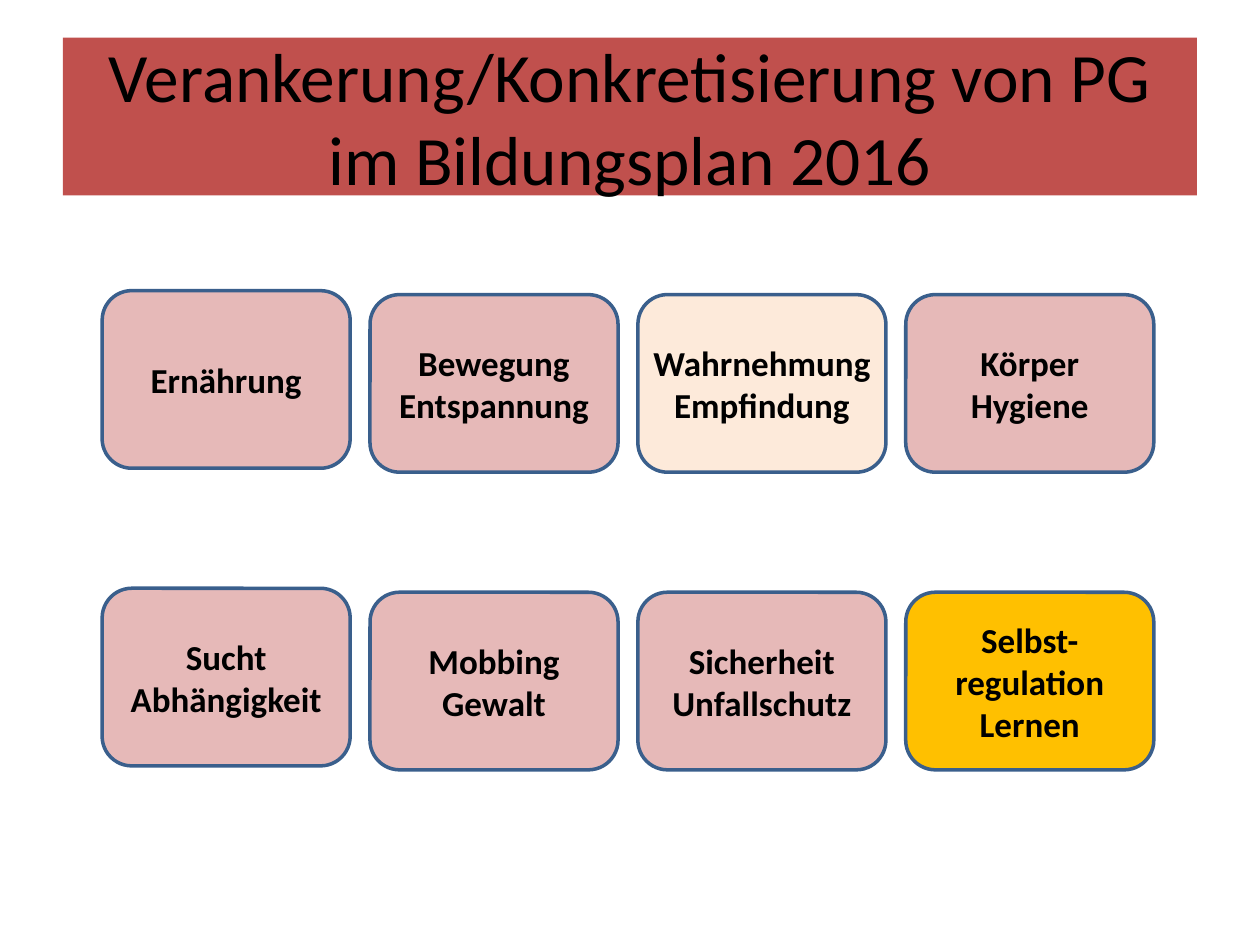
from pptx import Presentation
from pptx.dml.color import RGBColor
from pptx.enum.shapes import MSO_SHAPE
from pptx.enum.text import MSO_ANCHOR, PP_ALIGN
from pptx.util import Cm, Pt

RECTANGLE = MSO_SHAPE.RECTANGLE
ROUNDED = MSO_SHAPE.ROUNDED_RECTANGLE
MIDDLE = MSO_ANCHOR.MIDDLE
CENTER = PP_ALIGN.CENTER

COLORS = {
    "title": "C0504D",
    "rose": "E6B9B8",
    "cream": "FDEADA",
    "gold": "FFC000",
    "outline": "3A5F8C",
    "text": "000000",
}

TOPIC_ROWS = [
    [
        ("Ernährung", "rose"),
        ("Bewegung\nEntspannung", "rose"),
        ("Wahrnehmung\nEmpfindung", "cream"),
        ("Körper\nHygiene", "rose"),
    ],
    [
        ("Sucht\nAbhängigkeit", "rose"),
        ("Mobbing\nGewalt", "rose"),
        ("Sicherheit\nUnfallschutz", "rose"),
        ("Selbst-regulation\nLernen", "gold"),
    ],
]
LEFT, TOP = 2.06, 5.94
COLUMN_STEP, ROW_STEP = 5.4, 6
TOPIC_WIDTH, TOPIC_HEIGHT = 5, 3.58
FIRST_COLUMN_RAISE = 0.08


def color(name):
    return RGBColor.from_string(COLORS[name])


def write_text(shape, text, *, size, bold=False, margin=None):
    """Write centred text, one paragraph per line; margin is in centimetres."""
    frame = shape.text_frame
    frame.word_wrap = True
    frame.vertical_anchor = MIDDLE
    if margin is not None:
        frame.margin_left = frame.margin_right = Cm(margin)
        frame.margin_top = frame.margin_bottom = Cm(margin)
    frame.text = text
    for paragraph in frame.paragraphs:
        paragraph.alignment = CENTER
        font = paragraph.runs[0].font
        font.name = "Calibri"
        font.size = Pt(size)
        font.bold = bold
        font.color.rgb = color("text")


class SlideBuilder:
    """Holds the text sizes and the current slide."""

    title_size = 39.6
    topic_size = 20
    outline_width = 2

    def __init__(self, slide):
        self.slide = slide

    def box(self, kind, left, top, width, height, fill):
        shape = self.slide.shapes.add_shape(
            kind, Cm(left), Cm(top), Cm(width), Cm(height)
        )
        shape.shadow.inherit = False
        shape.fill.solid()
        shape.fill.fore_color.rgb = color(fill)
        return shape

    def title(self, text):
        shape = self.box(RECTANGLE, 1.27, 0.76, 22.86, 3.18, "title")
        shape.line.fill.background()
        write_text(shape, text, size=self.title_size)

    def topic(self, text, left, top, fill):
        shape = self.box(ROUNDED, left, top, TOPIC_WIDTH, TOPIC_HEIGHT, fill)
        shape.line.color.rgb = color("outline")
        shape.line.width = Pt(self.outline_width)
        write_text(shape, text, size=self.topic_size, bold=True, margin=0.1)


def main():
    presentation = Presentation()
    presentation.slide_width = Cm(25.4)
    presentation.slide_height = Cm(19.05)
    builder = SlideBuilder(
        presentation.slides.add_slide(presentation.slide_layouts[6])
    )

    builder.title("Verankerung/Konkretisierung von PG im Bildungsplan 2016")
    for row, topics in enumerate(TOPIC_ROWS):
        for column, (text, fill) in enumerate(topics):
            top = TOP + row * ROW_STEP
            if column == 0:
                top -= FIRST_COLUMN_RAISE
            builder.topic(text, LEFT + column * COLUMN_STEP, top, fill)

    presentation.save("out.pptx")


if __name__ == "__main__":
    main()
